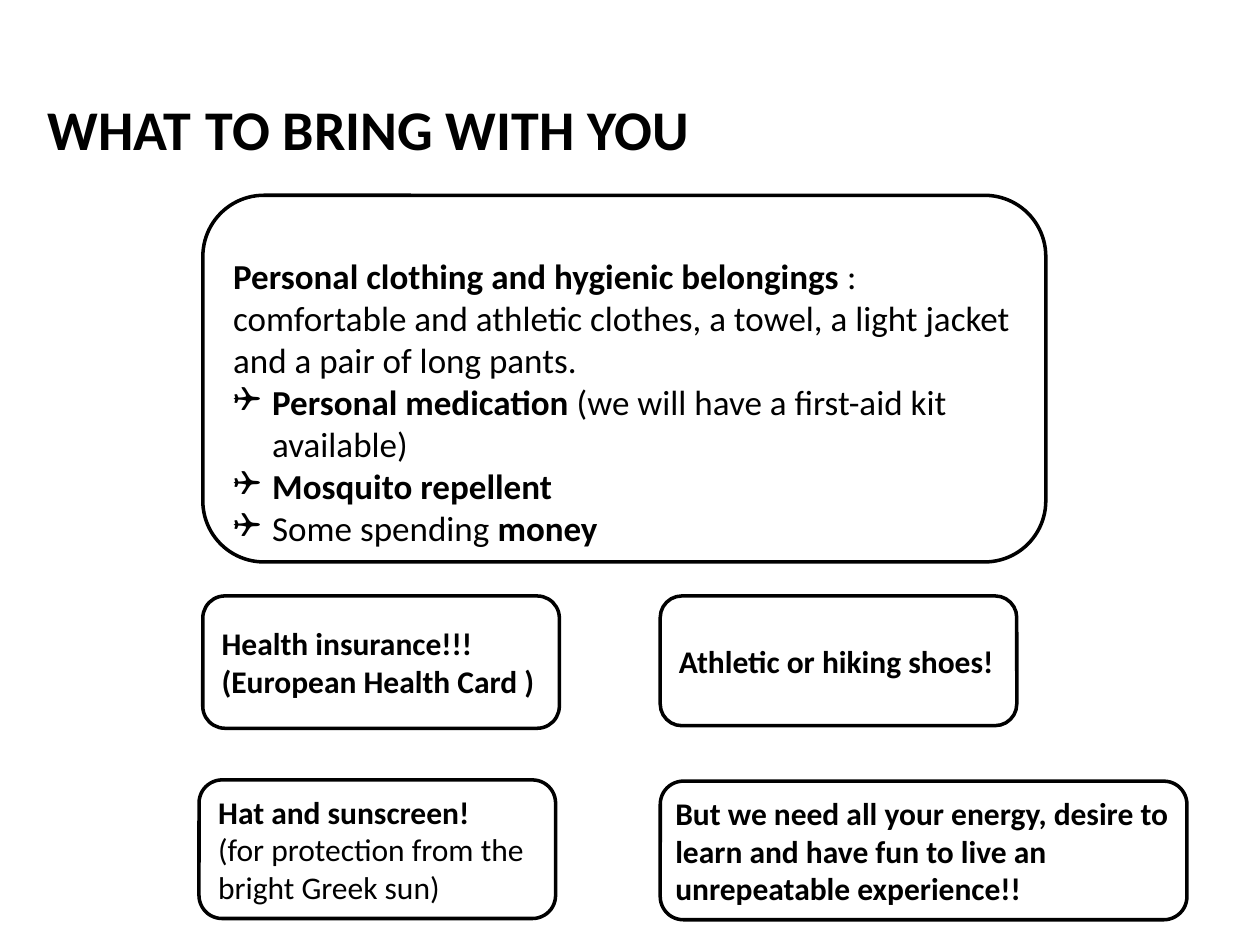
from pptx import Presentation
from pptx.dml.color import RGBColor
from pptx.enum.shapes import MSO_SHAPE as SHAPE
from pptx.enum.text import MSO_ANCHOR as ANCHOR, PP_ALIGN as ALIGN
from pptx.oxml.ns import qn
from pptx.util import Inches, Pt
from lxml import etree

COLORS = {"ink": "000000", "paper": "FFFFFF"}
FONT = "Calibri"


def color(name):
    return RGBColor.from_string(COLORS[name])


def add_run(p, text, size, bold=True):
    r = p.add_run()
    r.text = text
    r.font.name = FONT
    r.font.size = Pt(size)
    r.font.bold = bold
    r.font.color.rgb = color("ink")


def add_bullet(p):
    pPr = p._p.get_or_add_pPr()
    pPr.set("marL", str(Inches(0.31)))
    pPr.set("indent", str(-Inches(0.31)))
    etree.SubElement(pPr, qn("a:buFont")).set("typeface", "Wingdings")
    etree.SubElement(pPr, qn("a:buChar")).set("char", "❑")


def add_paragraphs(tf, paragraphs, size):
    """Each paragraph is (bulleted, [(text, bold), ...])."""
    tf.word_wrap = True
    for i, (bulleted, runs) in enumerate(paragraphs):
        p = tf.paragraphs[0] if i == 0 else tf.add_paragraph()
        p.alignment = ALIGN.LEFT
        if bulleted:
            add_bullet(p)
        for text, bold in runs:
            add_run(p, text, size, bold)


def add_panel(slide, box, shape=SHAPE.ROUNDED_RECTANGLE, outlined=True):
    sp = slide.shapes.add_shape(shape, *map(Inches, box))
    sp.shadow.inherit = False
    sp.fill.solid()
    sp.fill.fore_color.rgb = color("paper")
    if outlined:
        sp.line.color.rgb = color("ink")
        sp.line.width = Pt(2)
    else:
        sp.line.fill.background()
    sp.text_frame.vertical_anchor = ANCHOR.MIDDLE
    return sp


def add_title(slide, box):
    tf = slide.shapes.add_textbox(*map(Inches, box)).text_frame
    tf.word_wrap = True
    tf.margin_top = Inches(0.08)
    p = tf.paragraphs[0]
    for text, size in [("WHAT", 32), (" ", 37), ("TO BRING WITH YOU", 32)]:
        add_run(p, text, size)


def add_packing_list(slide, box):
    tf = add_panel(slide, box).text_frame
    tf.vertical_anchor = ANCHOR.TOP
    tf.margin_top = Inches(0.33)
    tf.margin_bottom = 0
    add_paragraphs(tf, [
        (False, [("Personal clothing and hygienic belongings ", True),
                 (": comfortable and athletic clothes, a towel, a light "
                  "jacket and a pair of long pants.", False)]),
        (True, [("Personal medication ", True),
                ("(we will have a first-aid kit available)", False)]),
        (True, [("Mosquito repellent", True)]),
        (True, [("Some spending ", False), ("money", True)]),
    ], 20)


def add_reminder(slide, box, *lines):
    tf = add_panel(slide, box).text_frame
    add_paragraphs(tf, [(False, [line]) for line in lines], 18)


def add_closing_note(slide, box):
    left, top, width, height = box
    pad_x, pad_y = 0.12, 0.11
    add_panel(slide, box)
    inner = (left + pad_x, top + pad_y, width - 2 * pad_x, height - 2 * pad_y)
    tf = add_panel(slide, inner, SHAPE.RECTANGLE, outlined=False).text_frame
    tf.margin_left = tf.margin_right = tf.margin_top = tf.margin_bottom = 0
    add_paragraphs(tf, [
        (False, [("But we need all your energy, desire to learn and have fun "
                  "to live an unrepeatable experience!!", True)]),
    ], 18)


def main():
    prs = Presentation()
    prs.slide_width, prs.slide_height = Inches(10), Inches(7.5)
    slide = prs.slides.add_slide(prs.slide_layouts[6])
    add_title(slide, (0.28, 0.6, 8.92, 4.92))
    add_packing_list(slide, (1.61, 1.55, 6.69, 2.91))
    add_reminder(slide, (1.61, 4.73, 2.83, 1.05),
                 ("Health insurance!!! (European Health Card )", True))
    add_reminder(slide, (1.58, 6.19, 2.83, 1.1),
                 ("Hat and sunscreen!", True),
                 ("(for protection from the bright Greek sun)", False))
    add_reminder(slide, (5.24, 4.73, 2.83, 1.03),
                 ("Athletic or hiking shoes!", True))
    add_closing_note(slide, (5.24, 6.2, 4.18, 1.1))
    prs.save("out.pptx")


if __name__ == "__main__":
    main()
